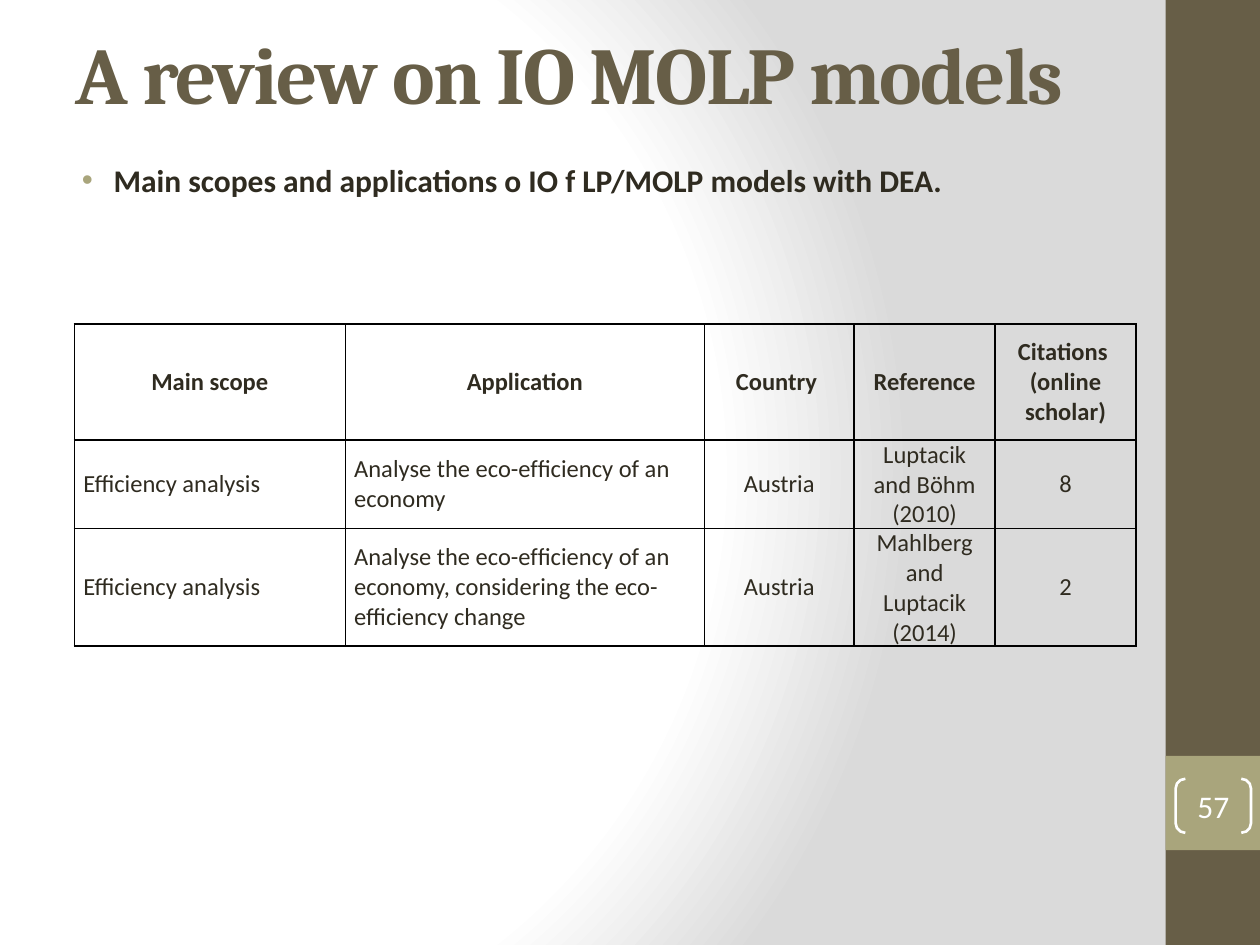
from pptx import Presentation
from pptx.dml.color import RGBColor
from pptx.enum.shapes import MSO_SHAPE as Preset
from pptx.enum.text import MSO_ANCHOR as Anchor, PP_ALIGN as Align
from pptx.oxml import parse_xml
from pptx.oxml.ns import nsdecls
from pptx.util import Cm, Pt

TITLE = "A review on IO MOLP models"
STATEMENT = "Main scopes and applications o IO f LP/MOLP models with DEA."
PAGE = "57"
HEADINGS = ["Main scope", "Application", "Country ", "Reference",
            "Citations \n(online scholar)"]
STUDIES = [
    ("Efficiency analysis", "Analyse the eco-efﬁciency of an economy",
     "Austria", "Luptacik and Böhm (2010)", "8"),
    ("Efficiency analysis",
     "Analyse the eco-efﬁciency of an economy, considering the eco-efficiency change",
     "Austria", "Mahlberg and Luptacik (2014)", "2"),
]
COLUMN_WIDTHS = [5.46, 7.24, 3.02, 2.84, 2.84]
ROW_HEIGHTS = [2.34, 1.55, 2.34]
LEFT_ALIGNED_COLUMNS = 2

BROWN = RGBColor(0x67, 0x5E, 0x47)
OLIVE = RGBColor(0xA9, 0xA5, 0x7C)
INK = RGBColor(0x2F, 0x2B, 0x20)
WHITE = RGBColor(0xFF, 0xFF, 0xFF)
BLACK = RGBColor(0, 0, 0)
GREY = RGBColor(0xDA, 0xDA, 0xDA)

TITLE_FONT = {"name": "Cambria", "size": Pt(46), "bold": True}
STATEMENT_FONT = {"name": "Calibri", "size": Pt(18), "bold": True}
PAGE_FONT = {"name": "Calibri", "size": Pt(18), "bold": False}
HEADING_FONT = {"name": "Calibri", "size": Pt(14), "bold": True}
STUDY_FONT = {**HEADING_FONT, "bold": False}
CELL_FORMAT = {"margin_left": Cm(0.18), "margin_right": Cm(0.18),
               "margin_top": 0, "margin_bottom": 0,
               "vertical_anchor": Anchor.MIDDLE}
TITLE_FRAME = {"word_wrap": True, "vertical_anchor": Anchor.MIDDLE}
STATEMENT_FRAME = {"word_wrap": True, "vertical_anchor": Anchor.TOP}
PAGE_FRAME = {**TITLE_FRAME, "margin_left": 0, "margin_right": 0,
              "margin_top": 0, "margin_bottom": 0}
TABLE_FORMAT = {"first_row": False, "horz_banding": False}


def apply(target, values):
    for name, value in values.items():
        setattr(target, name, value)


def write(frame, text, font, colour, align=Align.LEFT):
    frame.text = text
    for paragraph in frame.paragraphs:
        paragraph.alignment = align
        for run in paragraph.runs:
            apply(run.font, font)
            run.font.color.rgb = colour


def add_text(slide, box, frame_format, *content):
    frame = slide.shapes.add_textbox(*map(Cm, box)).text_frame
    apply(frame, frame_format)
    write(frame, *content)
    return frame.paragraphs[0]


def add_block(slide, preset, box, fill=None):
    block = slide.shapes.add_shape(preset, *map(Cm, box))
    block.shadow.inherit = False
    if fill is None:
        block.fill.background()
    else:
        block.fill.solid()
        block.fill.fore_color.rgb = fill
        block.line.fill.background()
    return block


def paint_background(slide):
    stops = "".join(
        f'<a:gs pos="{position * 1000}"><a:srgbClr val="{colour}"/></a:gs>'
        for position, colour in [(0, WHITE), (75, WHITE), (100, GREY)])
    slide.element.cSld.insert(0, parse_xml(
        f'<p:bg {nsdecls("p", "a")}><p:bgPr><a:gradFill rotWithShape="1">'
        f'<a:gsLst>{stops}</a:gsLst><a:path path="circle">'
        '<a:fillToRect l="20000" t="50000" r="100000" b="50000"/></a:path>'
        '</a:gradFill><a:effectLst/></p:bgPr></p:bg>'))


def draw_borders(cell):
    properties = cell._tc.get_or_add_tcPr()
    for index, side in enumerate("LRTB"):
        properties.insert(index, parse_xml(
            f'<a:ln{side} {nsdecls("a")} w="{Pt(1)}"><a:solidFill>'
            f'<a:srgbClr val="{BLACK}"/></a:solidFill></a:ln{side}>'))


def add_studies(slide):
    rows = [HEADINGS, *STUDIES]
    table = slide.shapes.add_table(
        len(rows), len(HEADINGS), Cm(1.5), Cm(6.53),
        Cm(sum(COLUMN_WIDTHS)), Cm(sum(ROW_HEIGHTS))).table
    apply(table, TABLE_FORMAT)
    for column, width in zip(table.columns, COLUMN_WIDTHS):
        column.width = Cm(width)
    for r, (texts, height) in enumerate(zip(rows, ROW_HEIGHTS)):
        table.rows[r].height = Cm(height)
        for c, text in enumerate(texts):
            cell = table.cell(r, c)
            apply(cell, CELL_FORMAT)
            cell.fill.background()
            draw_borders(cell)
            is_left = r > 0 and c < LEFT_ALIGNED_COLUMNS
            write(cell.text_frame, text, STUDY_FONT if r else HEADING_FONT,
                  INK, Align.LEFT if is_left else Align.CENTER)


def main():
    deck = Presentation()
    apply(deck, {"slide_width": Cm(25.4), "slide_height": Cm(19.05)})
    slide = deck.slides.add_slide(deck.slide_layouts[6])
    paint_background(slide)

    add_block(slide, Preset.RECTANGLE, (23.5, 0, 1.9, 19.05), BROWN)
    add_block(slide, Preset.RECTANGLE, (23.5, 15.24, 1.9, 1.9), OLIVE)

    title = add_text(slide, (1.27, 0.5, 21.16, 1.9), TITLE_FRAME,
                     TITLE, TITLE_FONT, BROWN)
    title.runs[0].font._element.set("spc", "-100")

    statement = add_text(slide, (1.09, 3.12, 21.16, 15.01), STATEMENT_FRAME,
                         STATEMENT, STATEMENT_FONT, INK)
    statement.space_before = Pt(3.6)
    bullet = statement._p.get_or_add_pPr()
    bullet.set("marL", str(Cm(0.95)))
    bullet.set("indent", str(-Cm(0.64)))
    for markup in (f'<a:buClr {nsdecls("a")}><a:srgbClr val="{OLIVE}"/></a:buClr>',
                   f'<a:buFont {nsdecls("a")} typeface="Arial"/>',
                   f'<a:buChar {nsdecls("a")} char="•"/>'):
        bullet.append(parse_xml(markup))

    add_studies(slide)

    brackets = add_block(slide, Preset.DOUBLE_BRACKET, (23.7, 15.7, 1.52, 1.09))
    brackets.adjustments[0] = 0.18
    brackets.line.color.rgb = WHITE
    brackets.line.width = Pt(1.5)
    apply(brackets.text_frame, PAGE_FRAME)
    write(brackets.text_frame, PAGE, PAGE_FONT, WHITE, Align.CENTER)

    deck.save("out.pptx")


if __name__ == "__main__":
    main()
